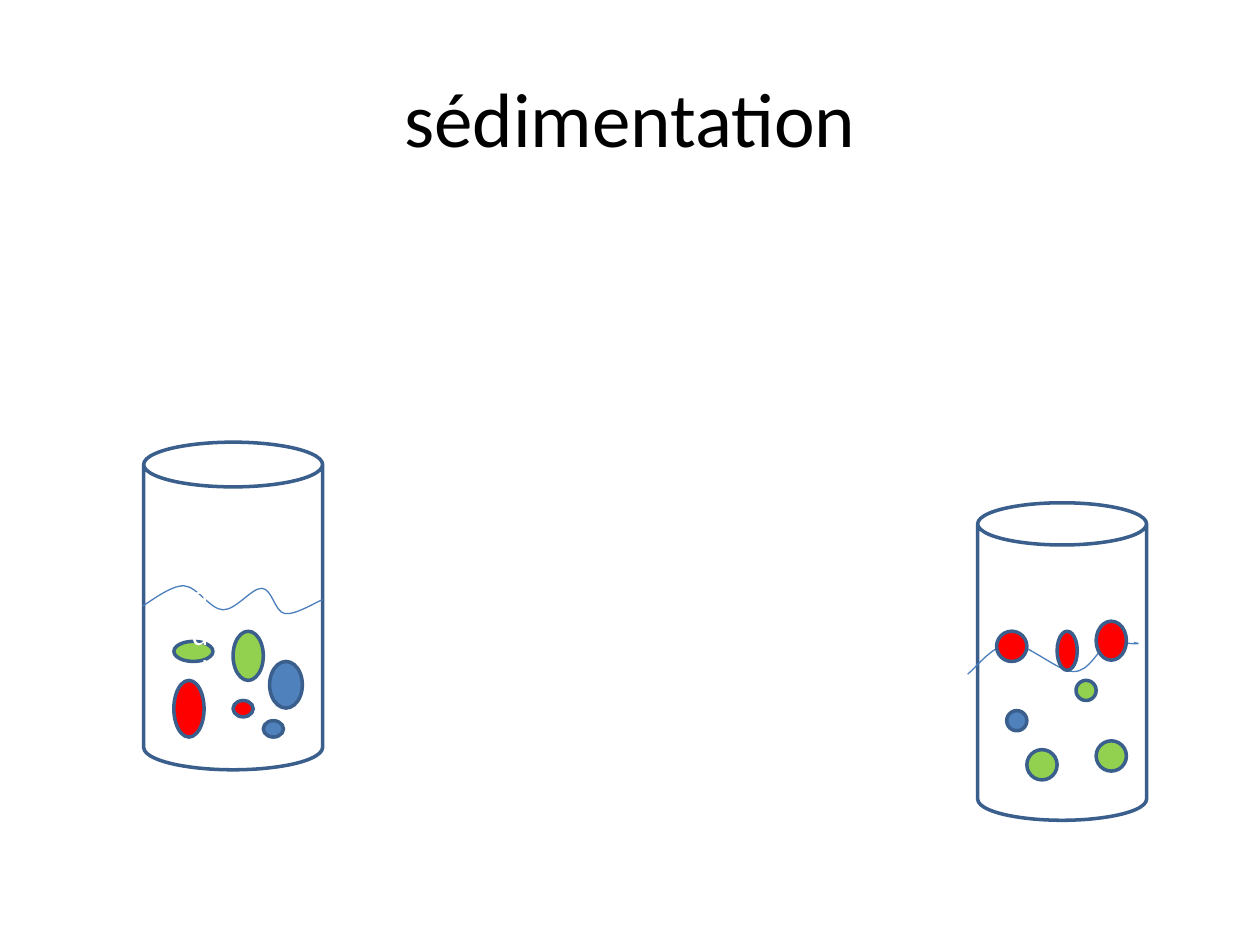
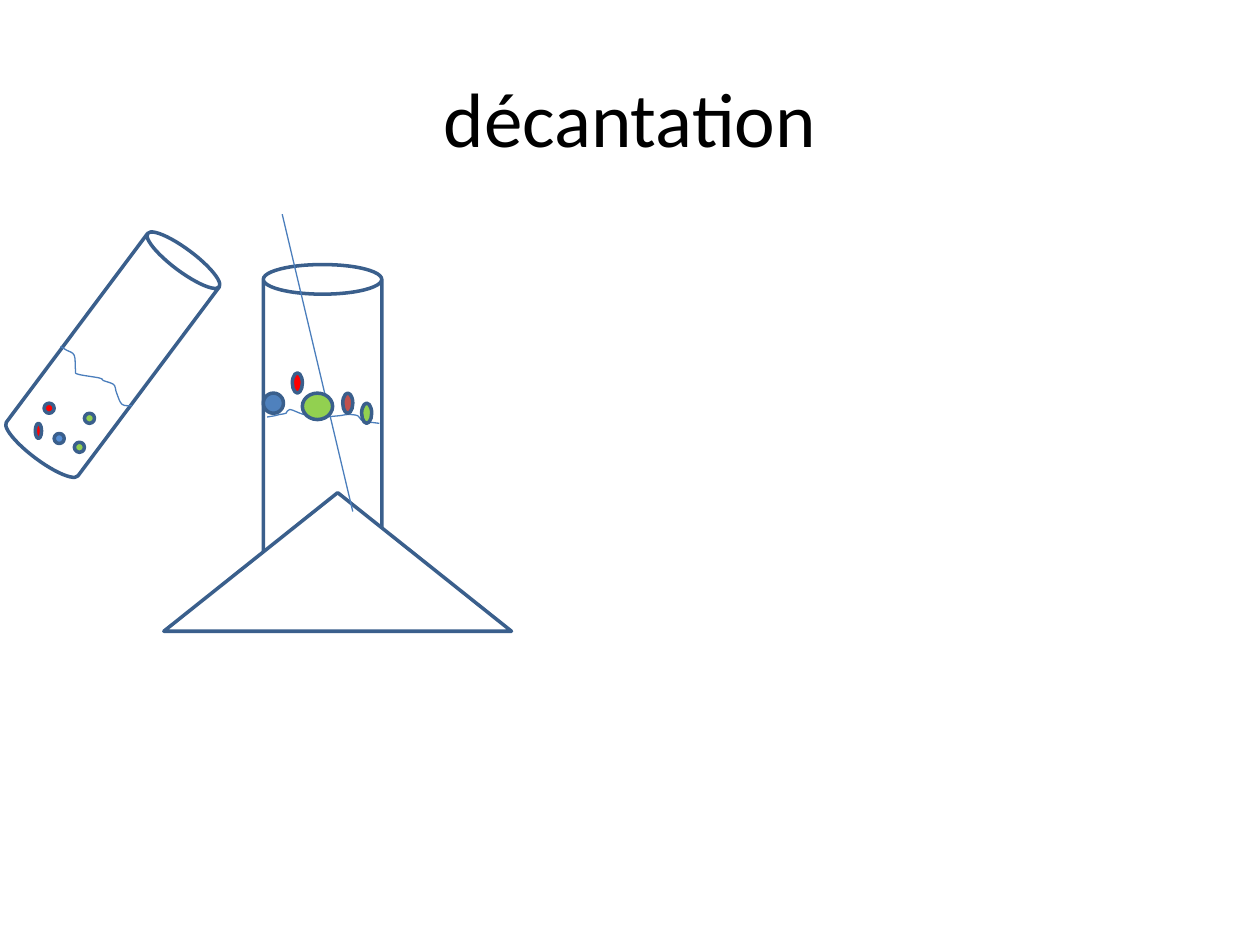
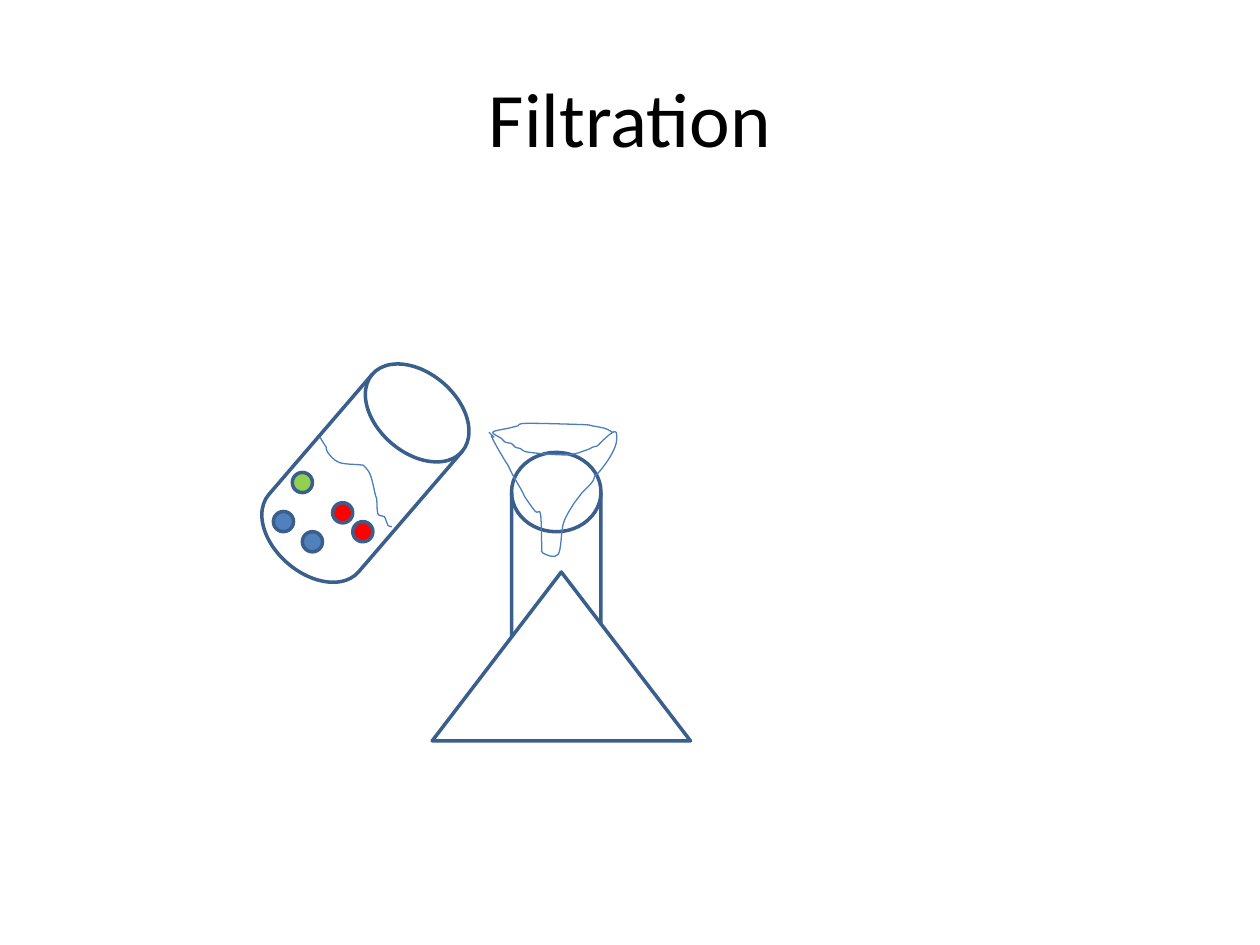
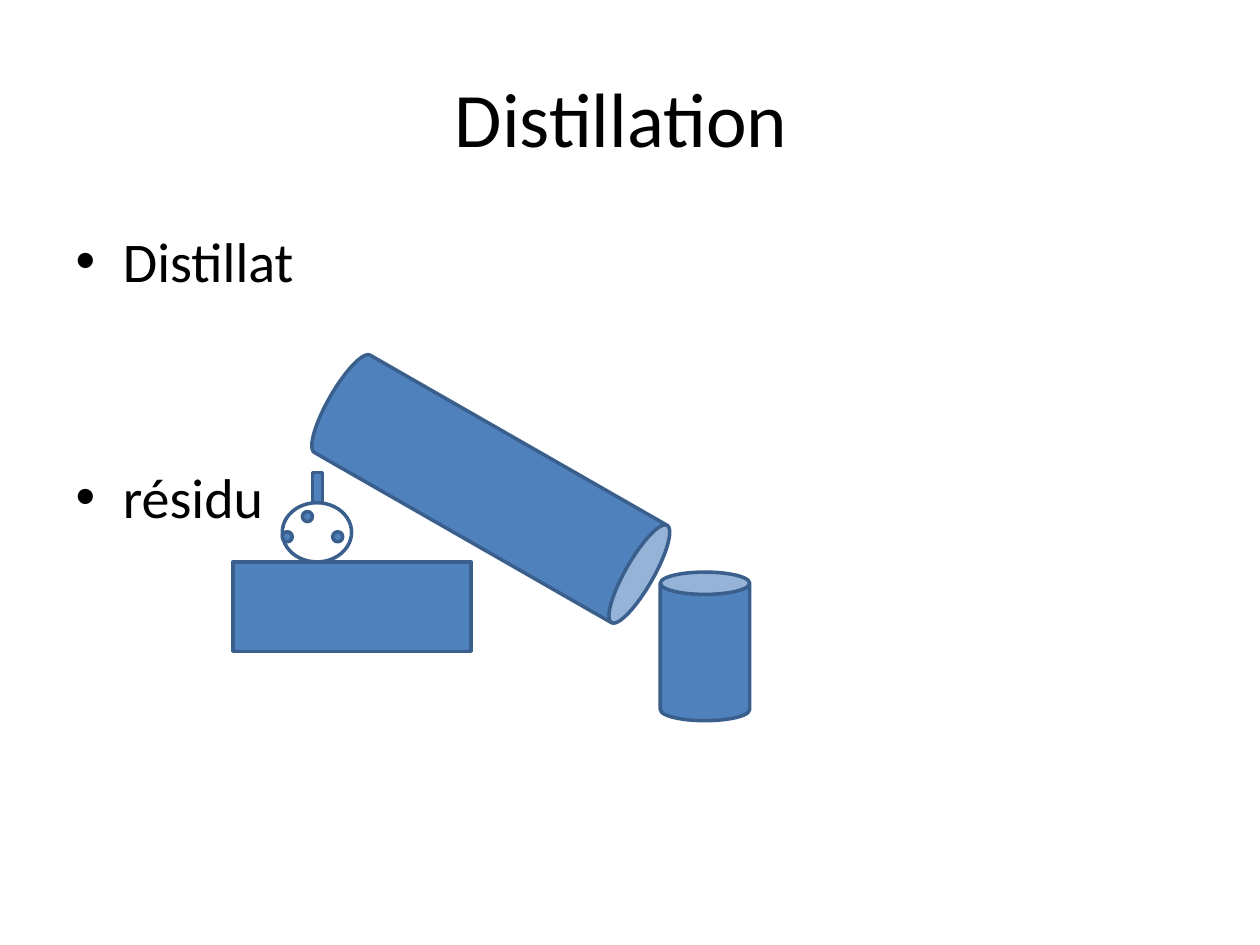
from lxml import etree
from pptx import Presentation
from pptx.dml.color import RGBColor
from pptx.enum.shapes import MSO_CONNECTOR, MSO_SHAPE
from pptx.enum.text import MSO_ANCHOR, PP_ALIGN
from pptx.oxml.ns import qn
from pptx.util import Emu, Pt

PX = 9144
FONT = "Calibri"
WHITE = "FFFFFF"
BLACK = "000000"
BLUE = "4F81BD"
SKY = "558ED5"
GREEN = "92D050"
RED = "FF0000"
BRICK = "C0504D"
OUTLINE = "3A5F8C"
THIN_LINE = "4B7EBC"

CAN = MSO_SHAPE.CAN
DISK = MSO_SHAPE.FLOWCHART_MAGNETIC_DISK
MERGE = MSO_SHAPE.FLOWCHART_MERGE
OVAL = MSO_SHAPE.OVAL
RECTANGLE = MSO_SHAPE.RECTANGLE
TRIANGLE = MSO_SHAPE.ISOSCELES_TRIANGLE
STRAIGHT = MSO_CONNECTOR.STRAIGHT
MIDDLE = MSO_ANCHOR.MIDDLE
CENTER = PP_ALIGN.CENTER

TITLE_AND_CONTENT = 1
TITLE_ONLY = 5


def px(*lengths):
    return [Emu(length * PX) for length in lengths]


def color(hex_string):
    return RGBColor.from_string(hex_string)


def place(shape, box):
    shape.left, shape.top, shape.width, shape.height = px(*box)


def format_paragraph(paragraph, size, hex_string):
    for run in paragraph.runs:
        run.font.name = FONT
        run.font.size = Pt(size)
        run.font.color.rgb = color(hex_string)


def format_line(shape, hex_string, width):
    shape.line.color.rgb = color(hex_string)
    shape.line.width = Pt(width)


def add_titled_slide(presentation, title, layout=TITLE_ONLY):
    slide = presentation.slides.add_slide(presentation.slide_layouts[layout])
    place(slide.shapes.title, (50, 30, 900, 125))
    text_frame = slide.shapes.title.text_frame
    text_frame.text = title
    text_frame.vertical_anchor = MIDDLE
    paragraph = text_frame.paragraphs[0]
    paragraph.alignment = CENTER
    format_paragraph(paragraph, 44, BLACK)
    return slide


def fill_body(slide, items, gap):
    body = slide.placeholders[1]
    place(body, (50, 175, 900, 495))
    body.text_frame.text = "\n".join(items)
    for index, paragraph in enumerate(body.text_frame.paragraphs):
        paragraph.space_before = Pt(gap if index else 0)
        format_paragraph(paragraph, 32, BLACK)


def add_solid(slide, kind, box, fill=WHITE, rotation=0):
    shape = slide.shapes.add_shape(kind, *px(*box))
    shape.shadow.inherit = False
    shape.fill.solid()
    shape.fill.fore_color.rgb = color(fill)
    format_line(shape, OUTLINE, 2)
    shape.rotation = rotation
    return shape


def add_particles(slide, particles):
    for fill, *box in particles:
        add_solid(slide, OVAL, box, fill)


def add_label(shape, text):
    text_frame = shape.text_frame
    text_frame.text = text
    text_frame.word_wrap = True
    text_frame.vertical_anchor = MIDDLE
    paragraph = text_frame.paragraphs[0]
    paragraph.alignment = CENTER
    format_paragraph(paragraph, 18, WHITE)


def curve_points(anchors):
    padded = [anchors[0], *anchors, anchors[-1]]
    points = []
    for before, start, end, after in zip(padded, padded[1:], padded[2:], padded[3:]):
        points.append([s + (e - b) / 6 for b, s, e in zip(before, start, end)])
        points.append([e - (a - s) / 6 for s, e, a in zip(start, end, after)])
        points.append(end)
    return [(round(x * PX), round(y * PX)) for x, y in points]


def add_curve(slide, anchors):
    builder = slide.shapes.build_freeform(*px(*anchors[0]), scale=1.0)
    builder.add_line_segments(curve_points(anchors), close=False)
    shape = builder.convert_to_shape()
    shape.shadow.inherit = False
    shape.fill.background()
    format_line(shape, THIN_LINE, 0.75)
    outline = shape.element.find(".//" + qn("a:path"))
    segments = outline.findall(qn("a:lnTo"))
    for index in range(0, len(segments), 3):
        bezier = etree.SubElement(outline, qn("a:cubicBezTo"))
        for segment in segments[index:index + 3]:
            bezier.append(segment[0])
            outline.remove(segment)


def add_straight_line(slide, start, end):
    connector = slide.shapes.add_connector(STRAIGHT, *px(*start, *end))
    format_line(connector, THIN_LINE, 0.75)
    etree.SubElement(connector.element.find(qn("p:spPr")), qn("a:effectLst"))


def build_sedimentation(presentation):
    slide = add_titled_slide(presentation, "sédimentation")
    add_solid(slide, CAN, (114, 351, 142, 260))
    add_curve(slide, [(113, 481), (146, 465), (177, 484), (208, 467),
                      (226, 487), (256, 476)])
    add_label(add_solid(slide, OVAL, (138, 509, 31, 16), GREEN), "dddd")
    add_particles(slide, [
        (RED, 185, 556, 16, 13),
        (RED, 138, 540, 24, 45),
        (BLUE, 214, 525, 26, 37),
        (BLUE, 209, 572, 16, 13),
        (GREEN, 185, 501, 24, 39),
    ])
    add_solid(slide, CAN, (776, 399, 134, 252))
    add_curve(slide, [(768, 535), (802, 511), (852, 533), (879, 512),
                      (902, 511), (900, 510)])
    add_particles(slide, [
        (BLUE, 799, 564, 16, 16),
        (GREEN, 854, 540, 16, 16),
        (RED, 791, 501, 24, 24),
        (RED, 870, 493, 24, 31),
        (RED, 839, 501, 16, 31),
        (GREEN, 815, 595, 24, 24),
        (GREEN, 870, 588, 24, 24),
    ])


def build_decantation(presentation):
    slide = add_titled_slide(presentation, "décantation")
    add_solid(slide, CAN, (209, 210, 94, 260))
    add_solid(slide, MERGE, (130, 391, 276, 110), rotation=180)
    add_solid(slide, CAN, (54, 179, 71, 205), rotation=36.8)
    add_curve(slide, [(48, 275), (53, 278), (59, 282), (60, 294), (62, 297),
                      (79, 300), (82, 302), (88, 304), (91, 306), (92, 310),
                      (93, 313), (97, 321), (105, 322)])
    add_particles(slide, [
        (GREEN, 67, 328, 8, 8),
        (GREEN, 59, 351, 8, 8),
        (SKY, 43, 344, 8, 8),
        (RED, 35, 320, 8, 8),
        (RED, 28, 336, 5, 12),
    ])
    add_straight_line(slide, (224, 170), (280, 406))
    add_curve(slide, [(212, 331), (218, 330), (222, 329), (227, 328),
                      (230, 325), (241, 329), (253, 331), (269, 330),
                      (276, 329), (284, 330), (288, 334), (301, 336)])
    add_particles(slide, [
        (RED, 232, 296, 8, 16),
        (GREEN, 287, 320, 8, 16),
        (BLUE, 209, 312, 16, 16),
        (GREEN, 240, 312, 24, 21),
        (BRICK, 272, 312, 8, 16),
    ])


def build_filtration(presentation):
    slide = add_titled_slide(presentation, "Filtration")
    add_solid(slide, DISK, (243, 281, 94, 189), rotation=40.7)
    add_solid(slide, DISK, (406, 359, 71, 189))
    add_solid(slide, TRIANGLE, (343, 454, 205, 134))
    add_curve(slide, [(388, 343), (392, 347), (390, 346), (394, 354),
                      (401, 366), (403, 369), (407, 377), (411, 384),
                      (415, 391), (417, 395), (425, 406), (429, 408),
                      (430, 433), (431, 439), (443, 440), (447, 416),
                      (454, 402), (459, 395), (462, 391), (468, 385),
                      (471, 381), (472, 378), (476, 374), (484, 363),
                      (489, 352), (489, 343), (485, 344), (478, 350),
                      (474, 354), (470, 355), (466, 357), (450, 361),
                      (420, 359), (413, 356), (409, 355), (406, 352),
                      (401, 351), (398, 348), (391, 343), (403, 340),
                      (411, 338), (418, 336), (462, 337), (470, 338),
                      (480, 340), (486, 343)])
    add_curve(slide, [(254, 347), (257, 352), (259, 355), (260, 359),
                      (269, 367), (286, 369), (289, 370), (294, 377),
                      (298, 393), (299, 396), (300, 408), (305, 410),
                      (308, 417), (311, 418)])
    add_particles(slide, [
        (GREEN, 232, 375, 16, 16),
        (RED, 264, 399, 16, 16),
        (BLUE, 217, 406, 16, 16),
        (BLUE, 240, 422, 16, 16),
        (RED, 280, 414, 16, 16),
    ])


def build_distillation(presentation):
    slide = add_titled_slide(presentation, "Distillation ", TITLE_AND_CONTENT)
    fill_body(slide, ["Distillat", "résidu"], 96)
    add_solid(slide, RECTANGLE, (185, 446, 189, 71), BLUE)
    add_solid(slide, OVAL, (224, 399, 55, 47))
    add_solid(slide, RECTANGLE, (248, 375, 8, 24), BLUE)
    add_particles(slide, [
        (BLUE, 224, 422, 8, 8),
        (BLUE, 240, 406, 8, 8),
        (BLUE, 264, 422, 8, 8),
    ])
    add_solid(slide, CAN, (524, 454, 71, 118), BLUE)
    add_solid(slide, CAN, (345, 241, 89, 294), BLUE, 119.8)


def main():
    presentation = Presentation()
    presentation.slide_width, presentation.slide_height = px(1000, 750)
    build_sedimentation(presentation)
    build_decantation(presentation)
    build_filtration(presentation)
    build_distillation(presentation)
    presentation.save("out.pptx")


if __name__ == "__main__":
    main()
